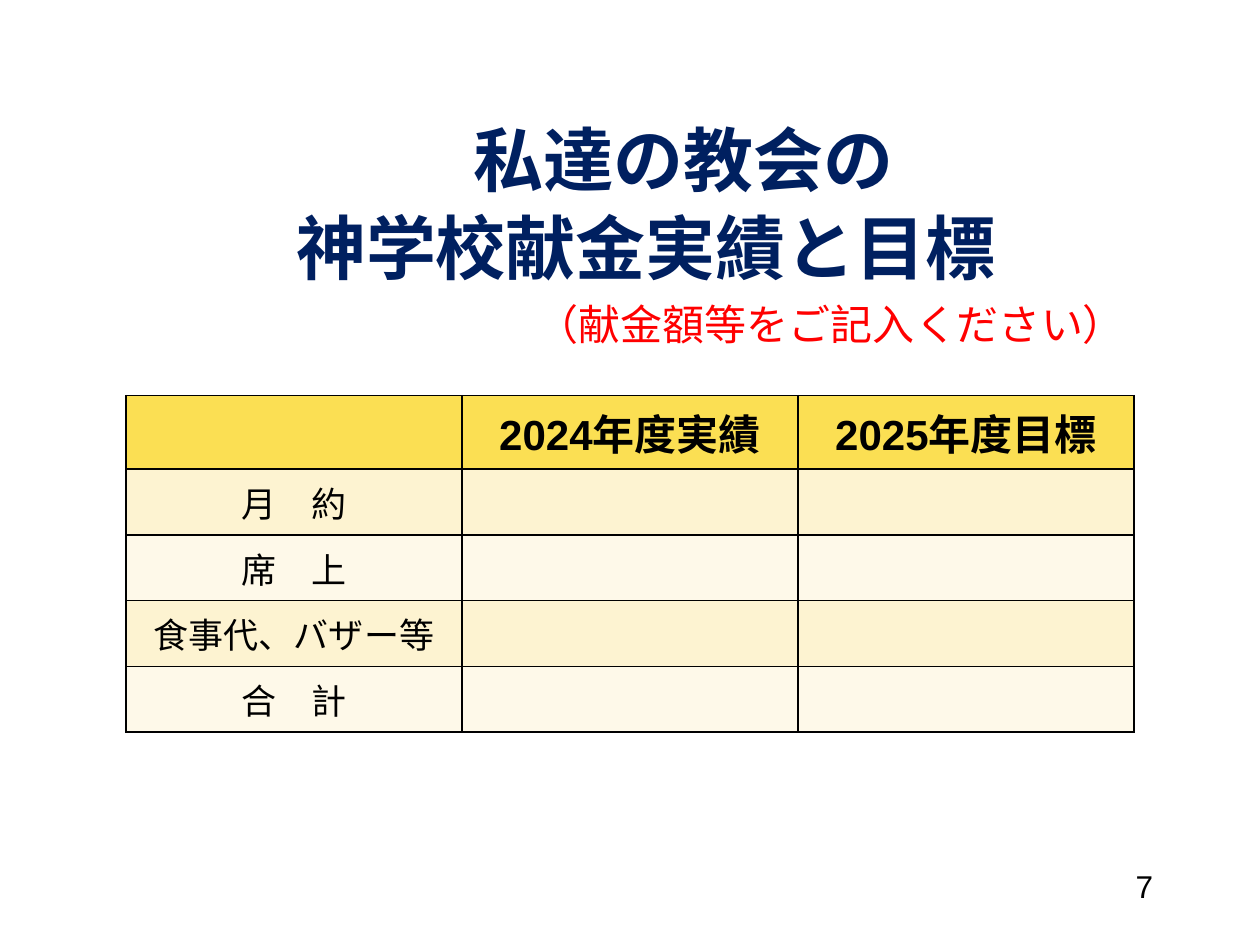
"""Build the slide with the seminary offering results and goals table."""
from dataclasses import dataclass

from lxml import etree
from pptx import Presentation
from pptx.dml.color import RGBColor
from pptx.enum.text import MSO_ANCHOR, MSO_AUTO_SIZE, PP_ALIGN
from pptx.oxml.ns import qn
from pptx.util import Inches, Pt

MIDDLE = MSO_ANCHOR.MIDDLE
CENTER, RIGHT = PP_ALIGN.CENTER, PP_ALIGN.RIGHT
NO_AUTOFIT = MSO_AUTO_SIZE.NONE


@dataclass(frozen=True)
class Theme:
    """Colours, fonts and type sizes of the slide."""
    navy: str = "002060"
    red: str = "FF0000"
    black: str = "000000"
    header_fill: str = "FBDF53"
    band_fills: tuple[str, str] = ("FDF3D1", "FEF9E9")
    latin: str = "Arial"
    japanese: str = "Noto Sans CJK JP"
    title_size: int = 40
    note_size: int = 24
    header_size: int = 24
    label_size: int = 20
    number_size: int = 18
    border: int = 1


@dataclass(frozen=True)
class TitleLine:
    """One line of the title with its indent in inches and height in points."""
    text: str
    size: int
    color: str
    bold: bool
    indent: float
    height: int


THEME = Theme()
TITLE_LINES = (
    TitleLine("私達の教会の", THEME.title_size, THEME.navy, True, 0.6, 50),
    TitleLine("神学校献金実績と目標", THEME.title_size, THEME.navy, True, 0, 50),
    TitleLine("（献金額等をご記入ください）", THEME.note_size, THEME.red, False, 2.94, 35),
)
TABLE_ROWS = (
    ("", "2024年度実績", "2025年度目標"),
    ("月　約", "", ""),
    ("席　上", "", ""),
    ("食事代、バザー等", "", ""),
    ("合　計", "", ""),
)


def write(para, text: str, size: int, color: str, bold: bool = False,
          latin: str = THEME.latin, alignment=CENTER) -> None:
    """Add one formatted run to a paragraph."""
    para.alignment = alignment
    span = para.add_run()
    span.text = text
    formats = {"size": Pt(size), "bold": bold, "name": latin}
    for name, value in formats.items():
        setattr(span.font, name, value)
    span.font.color.rgb = RGBColor.from_string(color)
    east_asian = etree.SubElement(span.font._element, qn("a:ea"))
    east_asian.set("typeface", THEME.japanese)


def add_title(page) -> None:
    """Place and fill the title placeholder."""
    title = page.shapes.title
    bounds = {"left": 1, "top": 0.75, "width": 8.25, "height": 2.17}
    for name, value in bounds.items():
        setattr(title, name, Inches(value))
    frame = title.text_frame
    formats = {"word_wrap": True, "auto_size": NO_AUTOFIT, "vertical_anchor": MIDDLE}
    for name, value in formats.items():
        setattr(frame, name, value)
    for index, line in enumerate(TITLE_LINES):
        para = frame.add_paragraph() if index else frame.paragraphs[0]
        para.line_spacing = Pt(line.height)
        para.space_before = Pt(0)
        write(para, line.text, line.size, line.color, line.bold, THEME.japanese)
        properties = para._p.get_or_add_pPr()
        properties.set("marL", str(Inches(line.indent)))
        properties.set("indent", "0")


def add_borders(cell) -> None:
    """Draw a thin black line on every side of a cell."""
    properties = cell._tc.get_or_add_tcPr()
    for index, side in enumerate(("lnL", "lnR", "lnT", "lnB")):
        line = etree.Element(qn(f"a:{side}"), w=str(Pt(THEME.border)))
        fill = etree.SubElement(line, qn("a:solidFill"))
        etree.SubElement(fill, qn("a:srgbClr"), val=THEME.black)
        properties.insert(index, line)


def add_offering_table(page) -> None:
    """Add the table of results and goals."""
    table = page.shapes.add_table(
        len(TABLE_ROWS), len(TABLE_ROWS[0]),
        Inches(1), Inches(3.14), Inches(8), Inches(2.61)).table
    for row_index, texts in enumerate(TABLE_ROWS):
        header = row_index == 0
        color = THEME.header_fill if header else THEME.band_fills[(row_index - 1) % 2]
        size = THEME.header_size if header else THEME.label_size
        for column_index, text in enumerate(texts):
            cell = table.cell(row_index, column_index)
            cell.vertical_anchor = MIDDLE
            cell.fill.solid()
            cell.fill.fore_color.rgb = RGBColor.from_string(color)
            add_borders(cell)
            if text:
                write(cell.text_frame.paragraphs[0], text, size, THEME.black, header)


def add_page_number(page) -> None:
    """Add the page number at the lower right."""
    box = page.shapes.add_textbox(Inches(7.17), Inches(6.83), Inches(2.08), Inches(0.5))
    box.text_frame.word_wrap = True
    write(box.text_frame.paragraphs[0], "7", THEME.number_size, THEME.black,
          alignment=RIGHT)


def main() -> None:
    """Build and save the deck."""
    deck = Presentation()
    deck.slide_width, deck.slide_height = Inches(10), Inches(7.5)
    page = deck.slides.add_slide(deck.slide_layouts.get_by_name("Title Only"))
    add_title(page)
    add_offering_table(page)
    add_page_number(page)
    deck.save("out.pptx")


if __name__ == "__main__":
    main()
